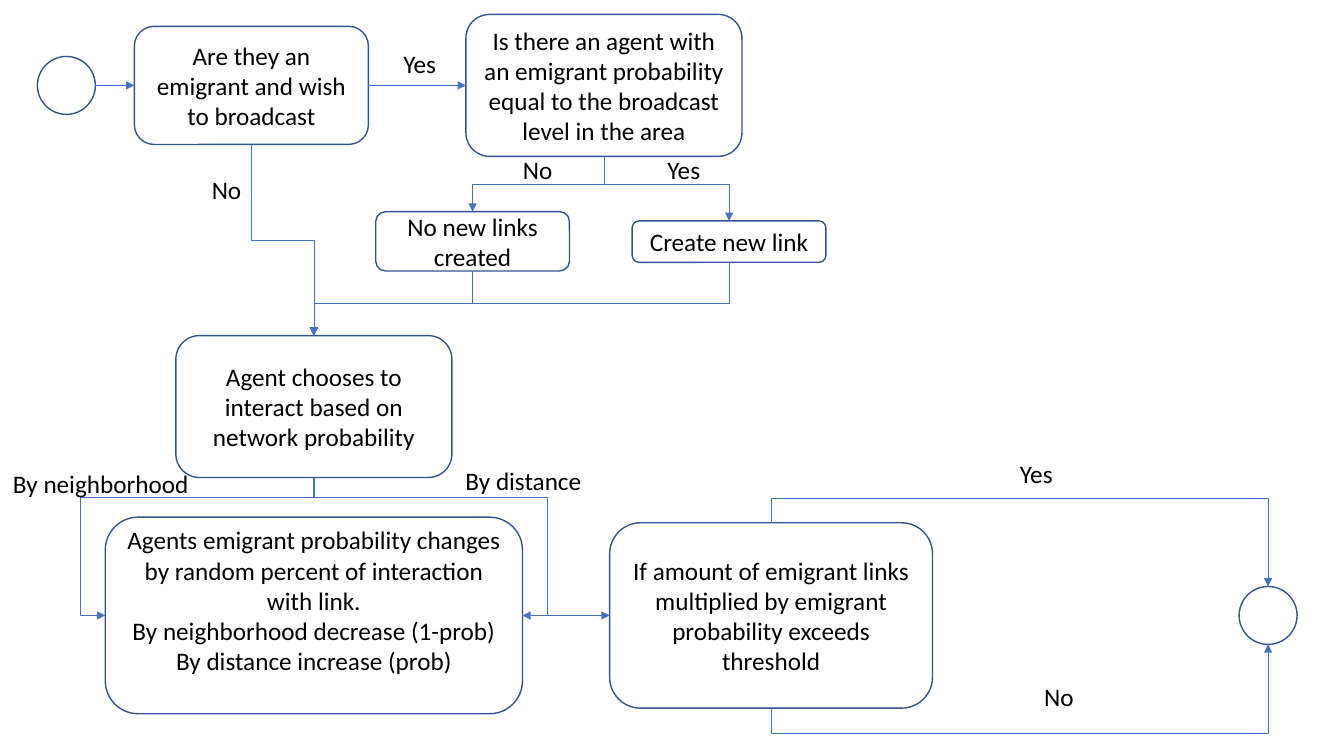
"""Draw the flowchart of how agents broadcast, link and interact."""
from lxml import etree
from pptx import Presentation
from pptx.dml.color import RGBColor
from pptx.enum.shapes import MSO_CONNECTOR, MSO_SHAPE
from pptx.enum.text import MSO_ANCHOR, PP_ALIGN
from pptx.oxml.ns import qn
from pptx.util import Pt

ROUND, OVAL = MSO_SHAPE.ROUNDED_RECTANGLE, MSO_SHAPE.OVAL
LINE, ELBOW = MSO_CONNECTOR.STRAIGHT, MSO_CONNECTOR.ELBOW
MIDDLE, TOP = MSO_ANCHOR.MIDDLE, MSO_ANCHOR.TOP
CENTER, LEFT = PP_ALIGN.CENTER, PP_ALIGN.LEFT
UP, WEST, DOWN, EAST = range(4)

FONT = {"name": "Calibri", "size": Pt(18)}
INK, EDGE, WIRE = "000000", "325491", "4472C4"

# name: (center x, center y, width, height, text)
NODES = {
    "start": (47.4, 61, 41.4, 41.4, ""),
    "ask": (179.6, 61, 167.2, 84.4, "Are they an emigrant and wish to broadcast"),
    "match": (431.4, 61, 197.2, 101.4,
              "Is there an agent with an emigrant probability equal to the "
              "broadcast level in the area"),
    "new": (520.8, 172.6, 138.4, 29.6, "Create new link"),
    "none": (337.6, 172.4, 138.4, 42.4, "No new links created"),
    "choose": (224.2, 290.4, 197.2, 101.4,
               "Agent chooses to interact based on network probability"),
    "change": (224.2, 439.6, 298, 140.4,
               "Agents emigrant probability changes by random percent of "
               "interaction with link.\nBy neighborhood decrease (1-prob)\n"
               "By distance increase (prob)"),
    "test": (550.8, 439.6, 230.6, 132.4,
             "If amount of emigrant links multiplied by emigrant probability "
             "exceeds threshold"),
    "end": (905.8, 439.6, 41.4, 41.4, ""),
}
# from, side, to, side, then the y of the level run and the x of the outer run
LINKS = [
    ("start", EAST, "ask", WEST),
    ("ask", EAST, "match", WEST),
    ("change", EAST, "test", WEST),
    ("ask", DOWN, "choose", UP, 171.4),
    ("match", DOWN, "none", UP, 131.4),
    ("match", DOWN, "new", UP, 132),
    ("none", DOWN, "choose", UP, 216.8),
    ("new", DOWN, "choose", UP, 216.8),
    ("choose", DOWN, "change", WEST, 355.6, 57.4),
    ("choose", DOWN, "change", EAST, 355.6, 391),
    ("test", UP, "end", UP, 355.6),
    ("test", DOWN, "end", DOWN, 523.8),
]
# left, top, width, text
LABELS = [
    (281, 30.6, 42, "Yes"),
    (469.6, 106.8, 42, "Yes"),
    (366.4, 106.8, 42, "No"),
    (721.4, 324, 42, "Yes"),
    (738.8, 483.4, 42, "No"),
    (144.2, 121, 42, "No"),
    (2.2, 331, 158.4, "By neighborhood"),
    (325.4, 328.6, 106, "By distance"),
]


def color(code):
    """Turn a hex string into a colour."""
    return RGBColor.from_string(code)


def write(shape, text, align, anchor):
    """Put formatted text in a shape."""
    frame = shape.text_frame
    frame.word_wrap, frame.vertical_anchor, frame.text = True, anchor, text
    for para in frame.paragraphs:
        para.alignment = align
        for key, val in FONT.items():
            setattr(para.font, key, val)
        para.font.color.rgb = color(INK)


def node(slide, cx, cy, wide, high, text):
    """Draw a rounded box, or a circle when there is no text."""
    shape = slide.shapes.add_shape(
        ROUND if text else OVAL, Pt(cx - wide / 2), Pt(cy - high / 2), Pt(wide), Pt(high))
    shape.shadow.inherit = False
    shape.fill.background()
    shape.line.color.rgb, shape.line.width = color(EDGE), Pt(1)
    if text:
        write(shape, text, CENTER, MIDDLE)
    return shape


def port(name, side):
    """Find the middle of a side of a node."""
    cx, cy, wide, high, _ = NODES[name]
    dx, dy = ((0, -1), (-1, 0), (0, 1), (1, 0))[side]
    return cx + dx * wide / 2, cy + dy * high / 2


def bend(wire, x1, y1, x2, y2, runs):
    """Give an elbow its preset and the places of its turns."""
    wire._element.spPr.find(qn("a:xfrm")).set("rot", "5400000")
    geom = wire._element.spPr.find(qn("a:prstGeom"))
    geom.set("prst", f"bentConnector{len(runs) + 2}")
    parts = [(runs[0] - y1) / (y2 - y1)] + [(x - x1) / (x2 - x1) for x in runs[1:]]
    for num, part in enumerate(parts, 1):
        etree.SubElement(geom.find(qn("a:avLst")), qn("a:gd"),
                         name=f"adj{num}", fmla=f"val {round(part * 100000)}")


def link(slide, shapes, src, out, dst, into, *runs):
    """Draw an arrow between two nodes."""
    x1, y1 = port(src, out)
    x2, y2 = port(dst, into)
    ends = x1, y1, x2, y2
    if runs:
        cx, cy, dx, dy = (x1 + x2) / 2, (y1 + y2) / 2, (x2 - x1) / 2, (y2 - y1) / 2
        ends = cx - dy, cy + dx, cx + dy, cy - dx
    wire = slide.shapes.add_connector(ELBOW if runs else LINE, *map(Pt, ends))
    wire.line.color.rgb, wire.line.width = color(WIRE), Pt(0.5)
    etree.SubElement(wire.line._get_or_add_ln(), qn("a:tailEnd"), type="triangle")
    etree.SubElement(wire._element.spPr, qn("a:effectLst"))
    if runs:
        bend(wire, x1, y1, x2, y2, runs)
    else:
        if NODES[src][4]:
            wire.begin_connect(shapes[src], out)
        wire.end_connect(shapes[dst], into)


def main():
    """Build and save the slide."""
    deck = Presentation()
    deck.slide_width, deck.slide_height = Pt(960), Pt(540)
    slide = deck.slides.add_slide(deck.slide_layouts[6])
    shapes = {name: node(slide, *spec) for name, spec in NODES.items()}
    shapes["change"].text_frame.margin_bottom = Pt(25.2)
    for row in LINKS:
        link(slide, shapes, *row)
    for left, top, wide, text in LABELS:
        box = slide.shapes.add_textbox(Pt(left), Pt(top), Pt(wide), Pt(29))
        write(box, text, LEFT, TOP)
    deck.save("out.pptx")


if __name__ == "__main__":
    main()
